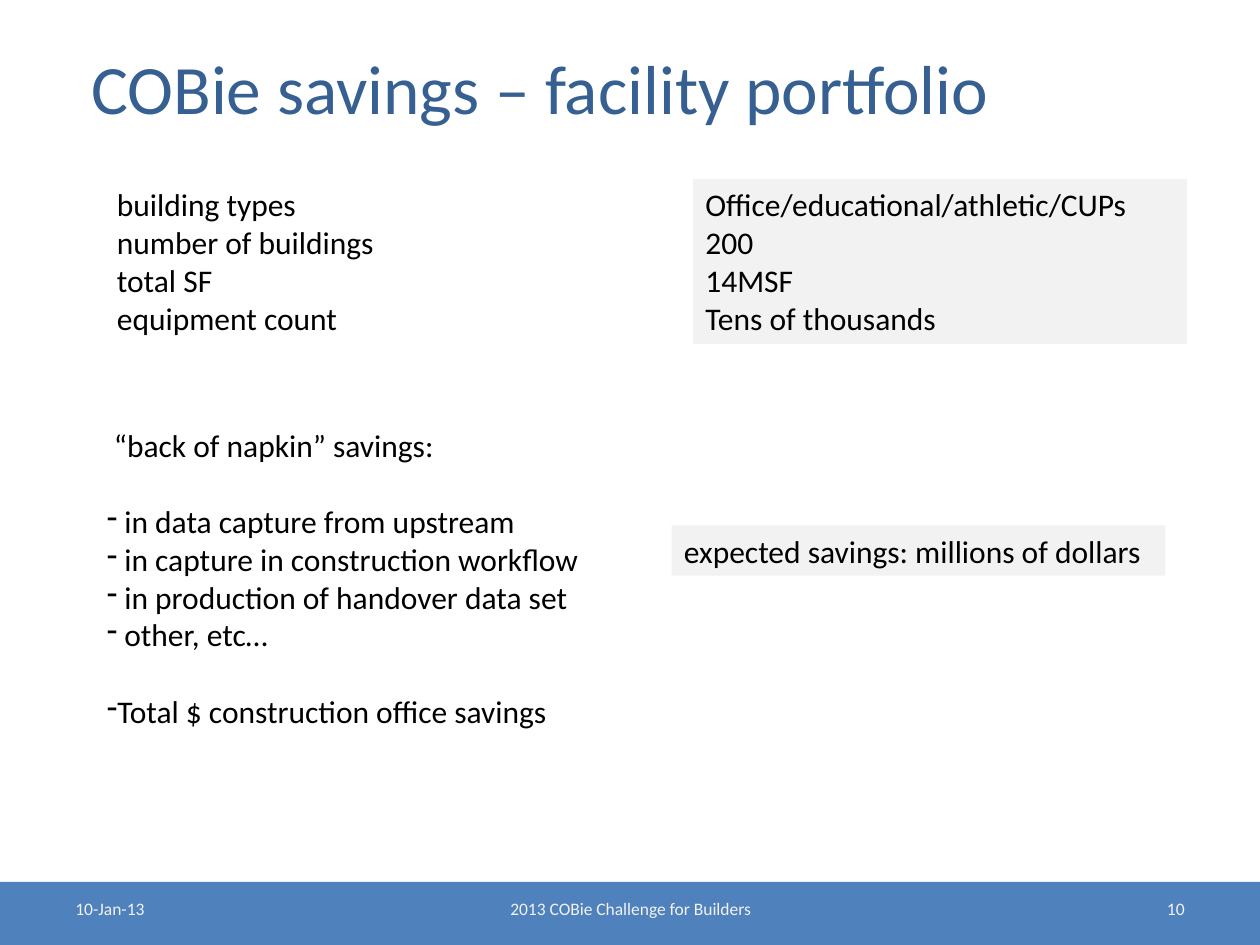
"""Build the COBie facility portfolio savings slide."""
from dataclasses import dataclass
from typing import Optional

from lxml.etree import SubElement
from pptx import Presentation
from pptx.dml.color import RGBColor
from pptx.enum.shapes import MSO_SHAPE
from pptx.enum.text import MSO_ANCHOR, MSO_AUTO_SIZE, PP_ALIGN
from pptx.oxml.ns import qn
from pptx.slide import Slide
from pptx.util import Inches, Pt

COLORS = {"title": "376092", "text": "000000", "panel": "F2F2F2",
          "band": "4F81BD", "footer": "F2F2F2"}
FONT = "Calibri"
BLANK_LINE = 22


@dataclass
class Line:
    text: str
    bullet: str = ""
    space_before: float = 0


@dataclass
class Block:
    left: float
    top: float
    width: float
    height: float
    lines: list[Line]
    fill: Optional[str] = None
    color: str = "text"
    size: float = 18
    align: PP_ALIGN = PP_ALIGN.LEFT


def footer(left: float, width: float, text: str, align: PP_ALIGN) -> Block:
    return Block(left, 7.08, width, 0.27, [Line(text)], None, "footer", 10, align)


BLOCKS = [
    Block(0.83, 1.42, 3.83, 1.31, [
        Line("building types"), Line("number of buildings"),
        Line("total SF"), Line("equipment count")]),
    Block(5.5, 1.42, 3.92, 1.31, [
        Line("Office/educational/athletic/CUPs"), Line("200"),
        Line("14MSF"), Line("Tens of thousands")], "panel"),
    Block(0.75, 3.33, 5.33, 2.52, [
        Line(" “back of napkin” savings:"),
        Line(" in data capture from upstream", "-", BLANK_LINE),
        Line(" in capture in construction workflow", "-"),
        Line(" in production of handover data set", "-"),
        Line(" other, etc…", "-"),
        Line("Total $ construction office savings", "-", BLANK_LINE)]),
    Block(5.33, 4.17, 3.92, 0.4,
          [Line("expected savings: millions of dollars")], "panel"),
    Block(0, 7, 10, 0.5, [], "band"),
    footer(3.42, 3.17, "2013 COBie Challenge for Builders", PP_ALIGN.CENTER),
    footer(7.17, 2.33, "10", PP_ALIGN.RIGHT),
    footer(0.5, 2.33, "10-Jan-13", PP_ALIGN.LEFT),
]


def add_run(paragraph, text: str, size: float, color: str) -> None:
    run = paragraph.add_run()
    run.text = text
    run.font.name = FONT
    run.font.size = Pt(size)
    run.font.color.rgb = RGBColor.from_string(COLORS[color])


def add_title(slide: Slide, text: str) -> None:
    title = slide.shapes.title
    title.left, title.top = Inches(0.5), Inches(0.3)
    title.width, title.height = Inches(9), Inches(0.78)
    frame = title.text_frame
    frame.auto_size = MSO_AUTO_SIZE.NONE
    frame.vertical_anchor = MSO_ANCHOR.MIDDLE
    paragraph = frame.paragraphs[0]
    paragraph.alignment = PP_ALIGN.LEFT
    add_run(paragraph, text, 39.6, "title")


def add_block(slide: Slide, block: Block) -> None:
    bounds = [Inches(value) for value in
              (block.left, block.top, block.width, block.height)]
    if block.fill:
        shape = slide.shapes.add_shape(MSO_SHAPE.RECTANGLE, *bounds)
        shape.shadow.inherit = False
        shape.fill.solid()
        shape.fill.fore_color.rgb = RGBColor.from_string(COLORS[block.fill])
        shape.line.fill.background()
    else:
        shape = slide.shapes.add_textbox(*bounds)
    frame = shape.text_frame
    frame.word_wrap = True
    frame.vertical_anchor = MSO_ANCHOR.TOP
    for index, line in enumerate(block.lines):
        paragraph = frame.add_paragraph() if index else frame.paragraphs[0]
        paragraph.alignment = block.align
        paragraph.space_before = Pt(line.space_before)
        if line.bullet:
            properties = paragraph._p.get_or_add_pPr()
            SubElement(properties, qn("a:buChar"), char=line.bullet)
        add_run(paragraph, line.text, block.size, block.color)


def main() -> None:
    presentation = Presentation()
    presentation.slide_width, presentation.slide_height = Inches(10), Inches(7.5)
    slide = presentation.slides.add_slide(
        presentation.slide_layouts.get_by_name("Title Only"))
    add_title(slide, " COBie savings – facility portfolio")
    for block in BLOCKS:
        add_block(slide, block)
    presentation.save("out.pptx")


if __name__ == "__main__":
    main()
